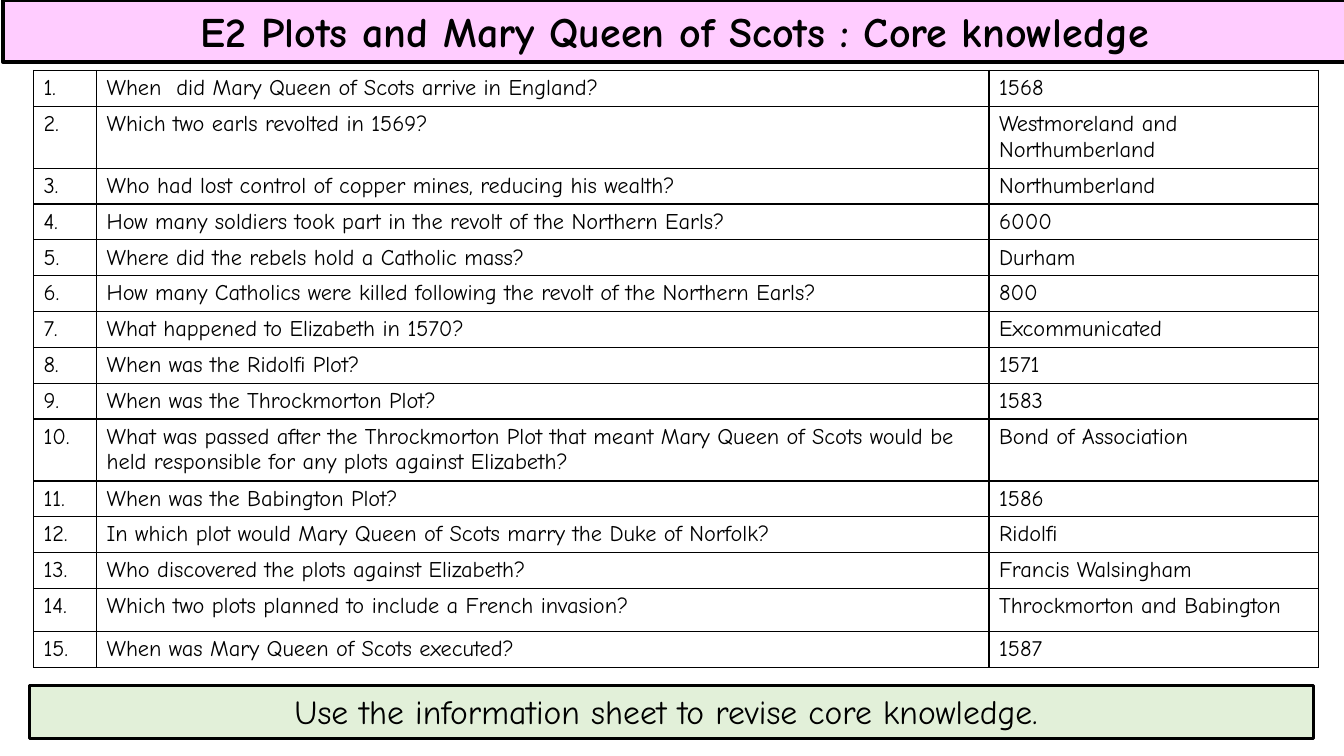
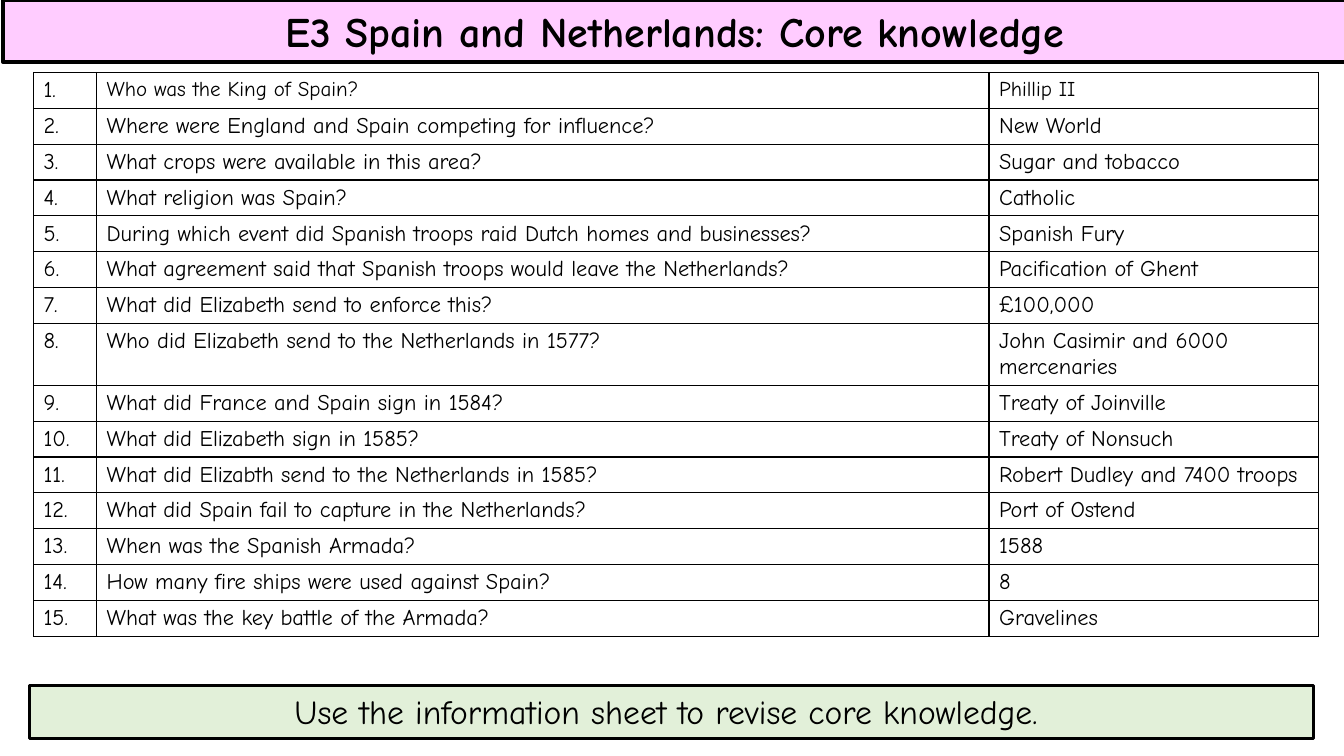
from pptx import Presentation
from pptx.dml.color import RGBColor
from pptx.enum.shapes import MSO_SHAPE
from pptx.enum.text import MSO_ANCHOR, PP_ALIGN
from pptx.oxml import parse_xml
from pptx.oxml.ns import nsdecls
from pptx.util import Pt

PX = 9525
RECTANGLE = MSO_SHAPE.RECTANGLE
CENTER = PP_ALIGN.CENTER
TOP, MIDDLE = MSO_ANCHOR.TOP, MSO_ANCHOR.MIDDLE

BLACK = RGBColor(0x00, 0x00, 0x00)
WHITE = RGBColor(0xFF, 0xFF, 0xFF)
PINK = RGBColor(0xFF, 0xCC, 0xFF)
PALE_GREEN = RGBColor(0xE2, 0xF0, 0xD9)
FONT = "Comic Neue"

SLIDE_SIZE = (1280, 720)
TITLE_BOX = (3, 0, 1280, 59)
FOOTER_BOX = (28, 653, 1223, 50)
FOOTER_TEXT = "Use the information sheet to revise core knowledge. "
TABLE_LEFT = 32
COLUMN_WIDTHS = (60, 850, 314)
ROW_HEIGHT = 34
TWO_LINE_HEIGHT = 59
CELL_SIZE = 16

PLOTS_ROWS = [
    ("When  did Mary Queen of Scots arrive in England?", "1568"),
    ("Which two earls revolted in 1569?", "Westmoreland and Northumberland"),
    ("Who had lost control of copper mines, reducing his wealth?", "Northumberland"),
    ("How many soldiers took part in the revolt of the Northern Earls?", "6000"),
    ("Where did the rebels hold a Catholic mass?", "Durham"),
    ("How many Catholics were killed following the revolt of the Northern Earls?", "800"),
    ("What happened to Elizabeth in 1570?", "Excommunicated"),
    ("When was the Ridolfi Plot?", "1571"),
    ("When was the Throckmorton Plot?", "1583"),
    ("What was passed after the Throckmorton Plot that meant Mary Queen of Scots "
     "would be held responsible for any plots against Elizabeth?", "Bond of Association"),
    ("When was the Babington Plot?", "1586"),
    ("In which plot would Mary Queen of Scots marry the Duke of Norfolk?", "Ridolfi"),
    ("Who discovered the plots against Elizabeth?", "Francis Walsingham"),
    ("Which two plots planned to include a French invasion?", "Throckmorton and Babington"),
    ("When was Mary Queen of Scots executed?", "1587"),
]

SPAIN_ROWS = [
    ("Who was the King of Spain?", "Phillip II"),
    ("Where were England and Spain competing for influence?", "New World"),
    ("What crops were available in this area?", "Sugar and tobacco"),
    ("What religion was Spain?", "Catholic"),
    ("During which event did Spanish troops raid Dutch homes and businesses?", "Spanish Fury"),
    ("What agreement said that Spanish troops would leave the Netherlands?",
     "Pacification of Ghent"),
    ("What did Elizabeth send to enforce this?", "£100,000"),
    ("Who did Elizabeth send to the Netherlands in 1577?", "John Casimir and 6000 mercenaries"),
    ("What did France and Spain sign in 1584?", "Treaty of Joinville"),
    ("What did Elizabeth sign in 1585?", "Treaty of Nonsuch"),
    ("What did Elizabth send to the Netherlands in 1585?", "Robert Dudley and 7400 troops"),
    ("What did Spain fail to capture in the Netherlands?", "Port of Ostend"),
    ("When was the Spanish Armada?", "1588"),
    ("How many fire ships were used against Spain?", "8"),
    ("What was the key battle of the Armada?", "Gravelines"),
]


def scale(lengths):
    return [length * PX for length in lengths]


def add_text(paragraph, text, size, bold=False):
    run = paragraph.add_run()
    run.text = text
    run.font.name = FONT
    run.font.size = Pt(size)
    run.font.bold = bold
    run.font.color.rgb = BLACK


def add_band(slide, box, text, fill, line_width, size, anchor, bold=False):
    shape = slide.shapes.add_shape(RECTANGLE, *scale(box))
    shape.shadow.inherit = False
    shape.fill.solid()
    shape.fill.fore_color.rgb = fill
    shape.line.color.rgb = BLACK
    shape.line.width = Pt(line_width)
    frame = shape.text_frame
    frame.word_wrap = True
    frame.vertical_anchor = anchor
    paragraph = frame.paragraphs[0]
    paragraph.alignment = CENTER
    add_text(paragraph, text, size, bold)


def add_borders(cell):
    properties = cell._tc.get_or_add_tcPr()
    for side in ("lnL", "lnR", "lnT", "lnB"):
        properties.append(parse_xml(
            f'<a:{side} {nsdecls("a")} w="{Pt(1)}"><a:solidFill>'
            f'<a:srgbClr val="{BLACK}"/></a:solidFill></a:{side}>'))


def fill_cell(cell, text, size):
    add_borders(cell)
    cell.fill.solid()
    cell.fill.fore_color.rgb = WHITE
    add_text(cell.text_frame.paragraphs[0], text, size)


def add_question_table(slide, top, questions, tall_rows, first_size):
    heights = [tall_rows.get(number, ROW_HEIGHT) for number in range(1, len(questions) + 1)]
    box = (TABLE_LEFT, top, sum(COLUMN_WIDTHS), sum(heights))
    table = slide.shapes.add_table(len(questions), len(COLUMN_WIDTHS), *scale(box)).table
    table.first_row = False
    table.horz_banding = False
    for column, width in zip(table.columns, scale(COLUMN_WIDTHS)):
        column.width = width
    for row, height in zip(table.rows, scale(heights)):
        row.height = height
    for number, (question, answer) in enumerate(questions, 1):
        size = first_size if number == 1 else CELL_SIZE
        cells = table.rows[number - 1].cells
        for cell, text, text_size in zip(
                cells, (f"{number}.", question, answer), (CELL_SIZE, size, size)):
            fill_cell(cell, text, text_size)


def add_knowledge_slide(presentation, title, top, questions, tall_rows, first_size=CELL_SIZE):
    slide = presentation.slides.add_slide(presentation.slide_layouts[6])
    add_band(slide, TITLE_BOX, title, PINK, 3, 30, MIDDLE, bold=True)
    add_band(slide, FOOTER_BOX, FOOTER_TEXT, PALE_GREEN, 2.25, 24, TOP)
    add_question_table(slide, top, questions, tall_rows, first_size)


def main():
    presentation = Presentation()
    presentation.slide_width, presentation.slide_height = scale(SLIDE_SIZE)
    add_knowledge_slide(
        presentation, "E2 Plots and Mary Queen of Scots : Core knowledge", 67, PLOTS_ROWS,
        {2: TWO_LINE_HEIGHT, 10: TWO_LINE_HEIGHT, 14: 41})
    add_knowledge_slide(
        presentation, "E3 Spain and Netherlands: Core knowledge", 69, SPAIN_ROWS,
        {8: TWO_LINE_HEIGHT}, first_size=15)
    presentation.save("out.pptx")


if __name__ == "__main__":
    main()
